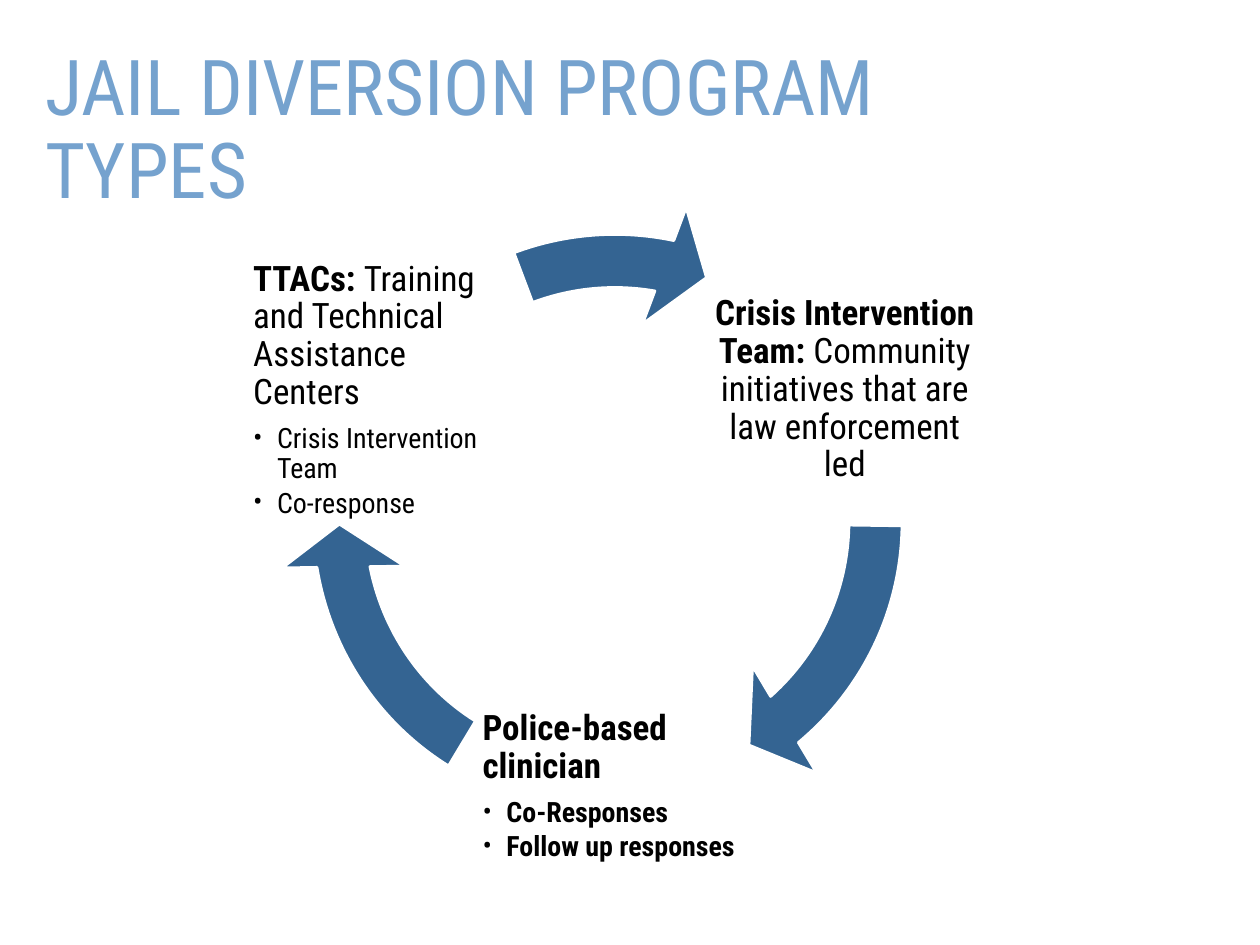
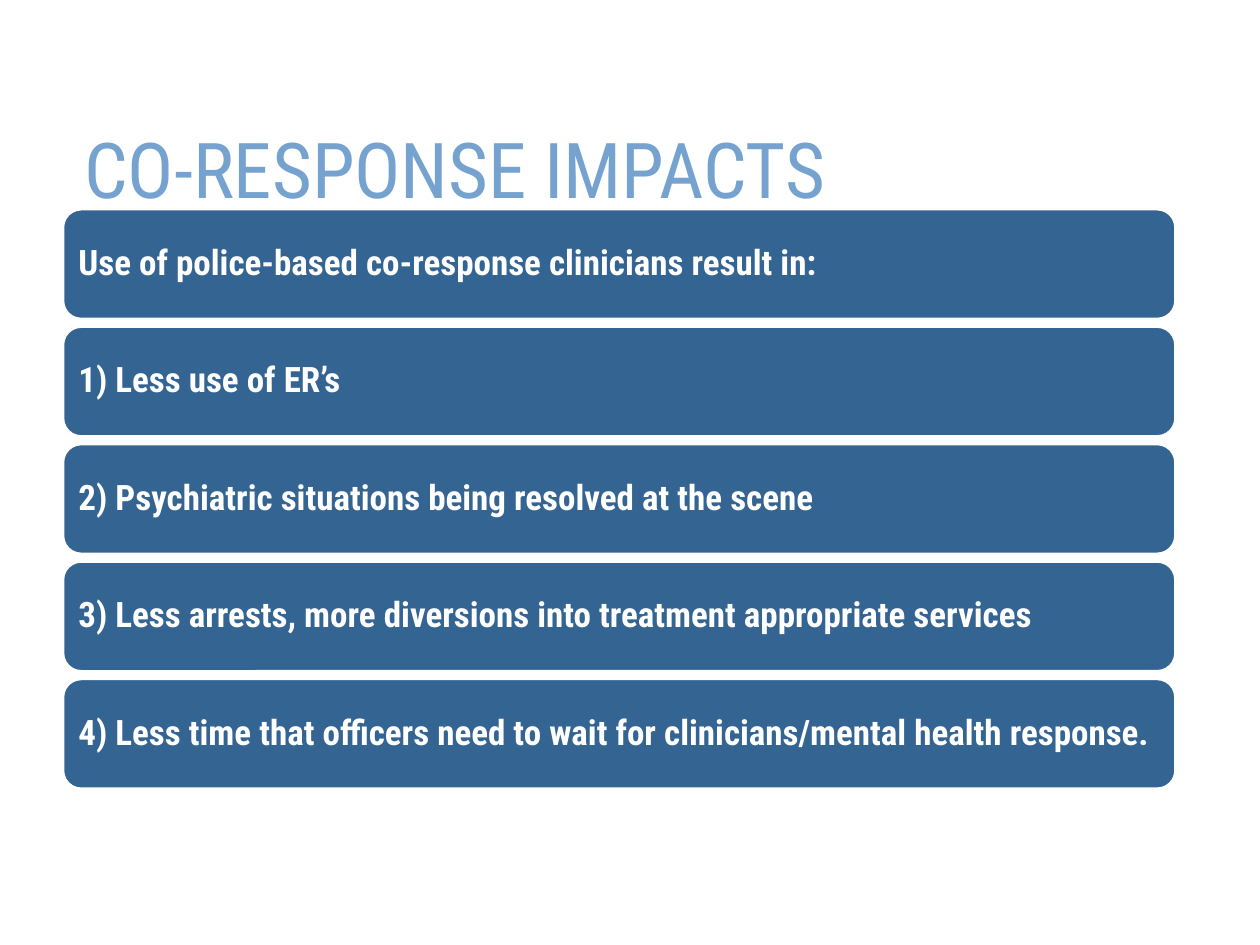
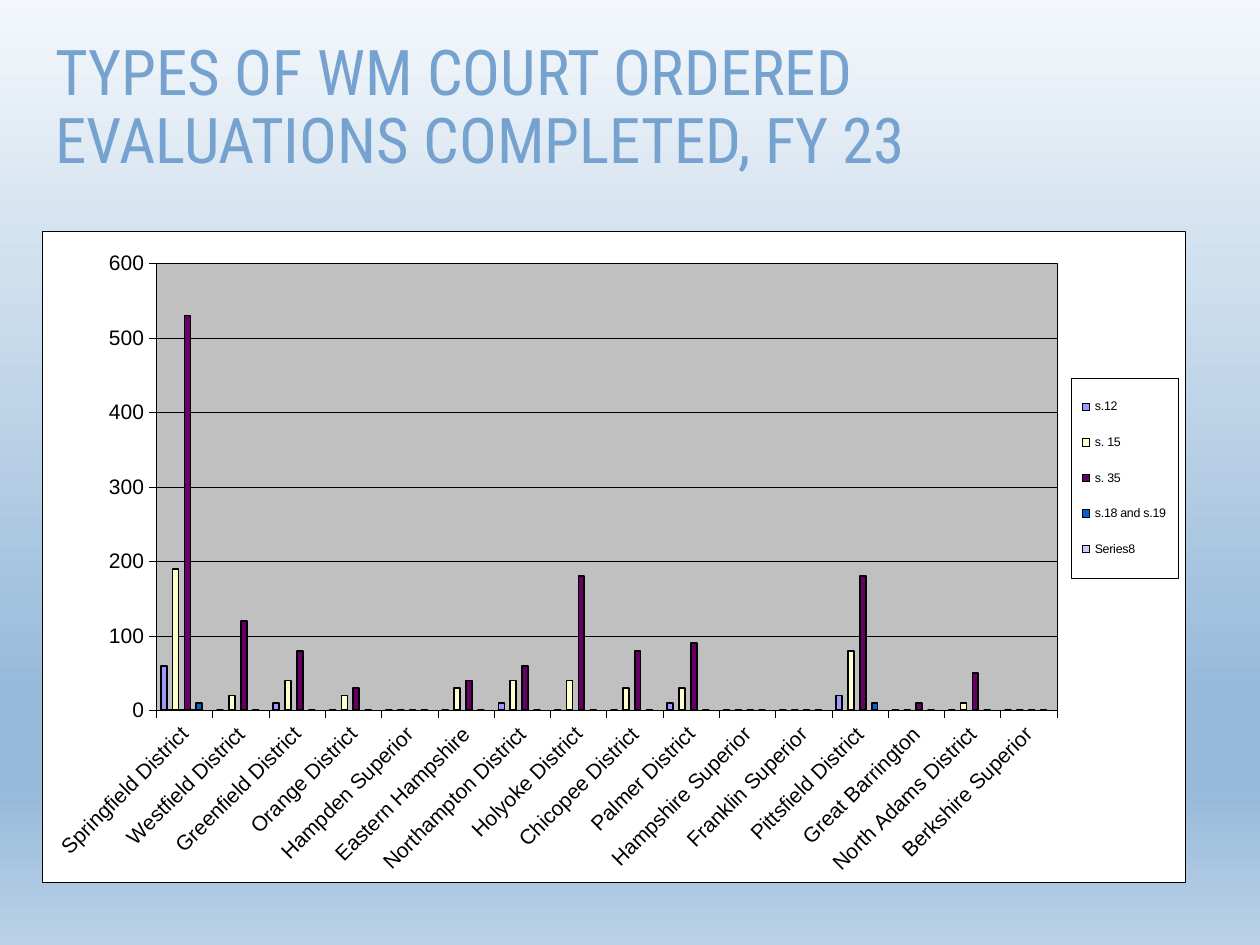
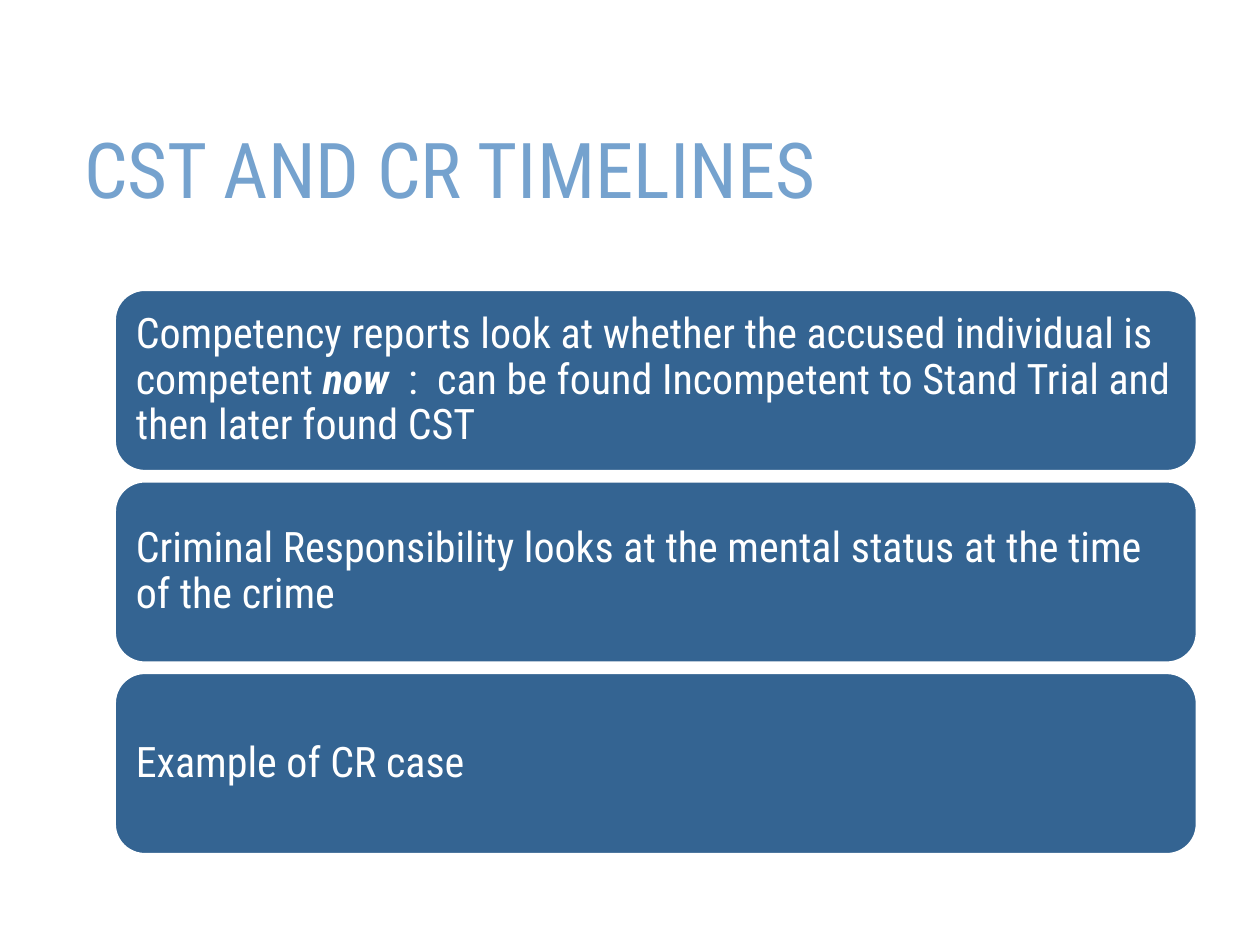
from pptx import Presentation
from pptx.chart.data import CategoryChartData
from pptx.dml.color import RGBColor
from pptx.enum.chart import XL_CHART_TYPE, XL_LEGEND_POSITION, XL_TICK_MARK
from pptx.enum.shapes import MSO_SHAPE
from pptx.enum.text import MSO_ANCHOR, PP_ALIGN
from pptx.oxml import parse_xml
from pptx.oxml.ns import nsdecls, qn
from pptx.util import Inches, Pt

FONT = "Roboto Condensed"
CHART_FONT = "Arial"
TITLE_BLUE = RGBColor(0x75, 0xA2, 0xCE)
BLUE = RGBColor(0x34, 0x64, 0x92)
WHITE = RGBColor(0xFF, 0xFF, 0xFF)
BLACK = RGBColor(0x00, 0x00, 0x00)
PLOT_GREY = RGBColor(0xC0, 0xC0, 0xC0)
SKY_STOPS = [(0, "F3F7FB"), (74, "97BADA"), (83, "97BADA"), (100, "BAD1E6")]

# ---- Content ----
# Program types: left, top, alignment, heading runs (text, bold), bullets, bullets bold
PROGRAMS = [
    (5.62, 2.01, PP_ALIGN.CENTER,
     [("Crisis Intervention Team: ", True),
      ("Community initiatives that are law enforcement led", False)], [], False),
    (3.8, 5.16, PP_ALIGN.LEFT, [("Police-based clinician", True)],
     ["Co-Responses", "Follow up responses"], True),
    (1.98, 2.01, PP_ALIGN.LEFT,
     [("TTACs: ", True), ("Training and Technical Assistance Centers", False)],
     ["Crisis Intervention Team", "Co-response"], False),
]
# Cycle arrows: left, top, width, end angle, start angle
CYCLE_ARROWS = [
    (2.32, 1.58, 5.12, 29.647, 0.511),
    (2.21, 1.57, 5.04, 101.729, 72.593),
    (2.32, 1.58, 5.12, 168.576, 149.665),
]
# Bands: each is a list of runs (text, emphasis)
IMPACTS = [[(text, False)] for text in (
    "Use of police-based co-response clinicians result in:",
    "1) Less use of ER’s",
    "2) Psychiatric situations being resolved at the scene",
    "3) Less arrests, more diversions into treatment appropriate services",
    "4) Less time that officers need to wait for clinicians/mental health response.",
)]
TIMELINES = [
    [("Competency reports look at whether the accused individual is competent ", False),
     ("now  ", True),
     (":  can be found Incompetent to Stand Trial and then later found CST", False)],
    [("Criminal Responsibility looks at the mental status at the time of the crime", False)],
    [("Example of CR case", False)],
]
COURTS = [
    "Springfield District", "Westfield District", "Greenfield District",
    "Orange District", "Hampden Superior", "Eastern Hampshire",
    "Northampton District", "Holyoke District", "Chicopee District",
    "Palmer District", "Hampshire Superior", "Franklin Superior",
    "Pittsfield District", "Great Barrington", "North Adams District",
    "Berkshire Superior",
]
EVALUATIONS = [
    ("s.12", "9999FF", [60, 0, 10, 0, 0, 0, 10, 0, 0, 10, 0, 0, 20, 0, 0, 0]),
    ("Series 2", "993366", [0]),
    ("s. 15", "FFFFCC", [190, 20, 40, 20, 0, 30, 40, 40, 30, 30, 0, 0, 80, 0, 10, 0]),
    ("Series 4", "CCFFFF", [0]),
    ("s. 35", "660066", [530, 120, 80, 30, 0, 40, 60, 180, 80, 90, 0, 0, 180, 10, 50, 0]),
    ("Series 6", "FF8080", [0]),
    ("s.18 and s.19", "0066CC", [10, 0, 0, 0, 0, 0, 0, 0, 0, 0, 0, 0, 10, 0, 0, 0]),
    ("Series8", "CCCCFF", [None] * len(COURTS)),
]
UNLISTED = [1, 3, 5]
CHART_WIDTH, CHART_HEIGHT = 9.08, 5.17


# ---- Text and shapes ----
def add_run(paragraph, text, size, color, bold=False, italic=False):
    run = paragraph.add_run()
    run.text = text
    font = run.font
    font.name, font.size, font.color.rgb = FONT, Pt(size), color
    font.bold, font.italic = bold, italic


def prepare_frame(shape, inset=None):
    frame = shape.text_frame
    frame.word_wrap = True
    frame.vertical_anchor = MSO_ANCHOR.MIDDLE
    if inset is not None:
        frame.margin_left = frame.margin_right = Inches(inset)
        frame.margin_top = frame.margin_bottom = Inches(inset)
    return frame


def set_paragraph(paragraph, align=PP_ALIGN.LEFT, after=0):
    paragraph.alignment = align
    paragraph.line_spacing = 0.9
    paragraph.space_after = Pt(after)


def add_bullet(paragraph):
    paragraph.level = 1
    properties = paragraph._p.get_or_add_pPr()
    properties.set("marL", str(Inches(0.19)))
    properties.set("indent", str(-Inches(0.19)))
    properties.append(parse_xml(f'<a:buFont {nsdecls("a")} typeface="{FONT}"/>'))
    properties.append(parse_xml(f'<a:buChar {nsdecls("a")} char="•"/>'))


def add_title(slide, text, left=0.57, top=0.75, width=8.53, height=1.26, size=44):
    box = slide.shapes.add_textbox(*map(Inches, (left, top, width, height)))
    paragraph = prepare_frame(box).paragraphs[0]
    set_paragraph(paragraph)
    add_run(paragraph, text, size, TITLE_BLUE)


def add_blue_shape(slide, kind, left, top, width, height):
    shape = slide.shapes.add_shape(kind, *map(Inches, (left, top, width, height)))
    shape.shadow.inherit = False
    shape.fill.solid()
    shape.fill.fore_color.rgb = BLUE
    shape.line.color.rgb = WHITE
    shape.line.width = Pt(1.5)
    return shape


def add_bands(slide, bands, left, top, width, bottom, gap, size, inset, bold):
    height = (bottom - top - gap * (len(bands) - 1)) / len(bands)
    for row, runs in enumerate(bands):
        band = add_blue_shape(slide, MSO_SHAPE.ROUNDED_RECTANGLE,
                              left, top + row * (height + gap), width, height)
        paragraph = prepare_frame(band, inset).paragraphs[0]
        set_paragraph(paragraph, after=size * 0.35)
        for text, emphasis in runs:
            add_run(paragraph, text, size, WHITE, bold or emphasis, emphasis)


def add_program(slide, left, top, align, heading, bullets, bullets_bold):
    box = slide.shapes.add_textbox(*map(Inches, (left, top, 2.17, 2.17)))
    frame = prepare_frame(box, 0.03)
    paragraph = frame.paragraphs[0]
    set_paragraph(paragraph, align, 7)
    for text, bold in heading:
        add_run(paragraph, text, 20, BLACK, bold)
    for text in bullets:
        paragraph = frame.add_paragraph()
        set_paragraph(paragraph, after=2.4)
        add_bullet(paragraph)
        add_run(paragraph, text, 16, BLACK, bullets_bold)


def set_sky_background(slide):
    fill = slide.background.fill
    fill.gradient()
    fill.gradient_angle = 270
    stops = slide._element.find(".//" + qn("a:gsLst"))
    for stop in list(stops):
        stops.remove(stop)
    for percent, color in SKY_STOPS:
        stops.append(parse_xml(f'<a:gs {nsdecls("a")} pos="{percent * 1000}">'
                               f'<a:srgbClr val="{color}"/></a:gs>'))


# ---- Chart ----
def area_style(fill, line):
    return parse_xml(
        f'<c:spPr {nsdecls("c", "a")}><a:solidFill><a:srgbClr val="{fill}"/></a:solidFill>'
        f'<a:ln w="{Pt(0.25)}"><a:solidFill><a:srgbClr val="{line}"/></a:solidFill></a:ln>'
        f'</c:spPr>')


def manual_layout(left, top, width, height, inner=False):
    """Place a chart part, in inches from the corner of the chart."""
    target = '<c:layoutTarget val="inner"/>' if inner else ""
    return parse_xml(
        f'<c:layout {nsdecls("c")}><c:manualLayout>{target}'
        f'<c:xMode val="edge"/><c:yMode val="edge"/>'
        f'<c:x val="{left / CHART_WIDTH}"/><c:y val="{top / CHART_HEIGHT}"/>'
        f'<c:w val="{width / CHART_WIDTH}"/><c:h val="{height / CHART_HEIGHT}"/>'
        f'</c:manualLayout></c:layout>')


def drop_layout(element):
    for layout in element.findall(qn("c:layout")):
        element.remove(layout)


def set_font(font, size):
    font.name, font.size, font.color.rgb = CHART_FONT, Pt(size), BLACK
    font.bold = False


def set_line(line, width):
    line.color.rgb = BLACK
    line.width = Pt(width)


def add_evaluations_chart(slide):
    data = CategoryChartData()
    data.categories = COURTS
    for name, _, values in EVALUATIONS:
        data.add_series(name, values)
    chart = slide.shapes.add_chart(
        XL_CHART_TYPE.COLUMN_CLUSTERED,
        *map(Inches, (0.33, 1.83, CHART_WIDTH, CHART_HEIGHT)), data).chart
    chart.has_title = False
    set_font(chart.font, 12)

    # Columns
    columns = chart.plots[0]
    columns.gap_width, columns.overlap = 150, 0
    columns.vary_by_categories = False
    for series, (_, color, _) in zip(columns.series, EVALUATIONS):
        series.format.fill.solid()
        series.format.fill.fore_color.rgb = RGBColor.from_string(color)
        set_line(series.format.line, 1)

    # Axes
    for axis in (chart.category_axis, chart.value_axis):
        axis.major_tick_mark = XL_TICK_MARK.OUTSIDE
        axis.minor_tick_mark = XL_TICK_MARK.NONE
        set_font(axis.tick_labels.font, 12)
        set_line(axis.format.line, 0.25)
    counts = chart.value_axis
    counts.minimum_scale, counts.maximum_scale, counts.major_unit = 0, 600, 100
    counts.has_major_gridlines = True
    set_line(counts.major_gridlines.format.line, 0.25)
    court_labels = chart.category_axis._element.find(qn("c:txPr")).find(qn("a:bodyPr"))
    court_labels.set("rot", str(-45 * 60000))
    court_labels.set("vert", "horz")

    # Legend
    chart.has_legend = True
    chart.legend.position = XL_LEGEND_POSITION.RIGHT
    chart.legend.include_in_layout = False
    set_font(chart.legend.font, 7.1)
    legend = chart.legend._element
    drop_layout(legend)
    position = legend.find(qn("c:legendPos"))
    position.addnext(manual_layout(8.17, 1.17, 0.85, 1.59))
    for index in reversed(UNLISTED):
        position.addnext(parse_xml(
            f'<c:legendEntry {nsdecls("c")}><c:idx val="{index}"/>'
            f'<c:delete val="1"/></c:legendEntry>'))
    legend.find(qn("c:txPr")).addprevious(area_style(WHITE, BLACK))

    # Plot area and frame
    chart_space = chart._chartSpace
    plot_area = chart_space.find(".//" + qn("c:plotArea"))
    drop_layout(plot_area)
    plot_area.insert(0, manual_layout(0.91, 0.26, 7.15, 3.55, inner=True))
    plot_area.append(area_style(PLOT_GREY, BLACK))
    chart_space.find(qn("c:chart")).addnext(area_style(WHITE, BLACK))


# ---- Slides ----
def main():
    deck = Presentation()
    deck.slide_width, deck.slide_height = Inches(10), Inches(7.5)
    blank = deck.slide_layouts[6]

    types = deck.slides.add_slide(blank)
    add_title(types, "JAIL DIVERSION PROGRAM TYPES", 0.26, 0.5, 8.17, 1.09)
    for program, (left, top, width, end, start) in zip(PROGRAMS, CYCLE_ARROWS):
        add_program(types, *program)
        arrow = add_blue_shape(types, MSO_SHAPE.CIRCULAR_ARROW, left, top, width, 5.12)
        for index, value in enumerate((0.082, 5.759, end, start, 0.096)):
            arrow.adjustments[index] = value

    impacts = deck.slides.add_slide(blank)
    add_title(impacts, "CO-RESPONSE IMPACTS")
    add_bands(impacts, IMPACTS, left=0.5, top=1.66, width=8.83, bottom=6.26,
              gap=0.06, size=20, inset=0.08, bold=True)

    evaluations = deck.slides.add_slide(blank)
    set_sky_background(evaluations)
    add_title(evaluations, "TYPES OF WM COURT ORDERED EVALUATIONS COMPLETED, FY 23",
              0.34, 0.24, 7.55, size=36)
    add_evaluations_chart(evaluations)

    timelines = deck.slides.add_slide(blank)
    add_title(timelines, "CST AND CR TIMELINES")
    add_bands(timelines, TIMELINES, left=0.91, top=2.3, width=8.59, bottom=6.78,
              gap=0.08, size=24, inset=0.1, bold=False)

    deck.save("out.pptx")


if __name__ == "__main__":
    main()
